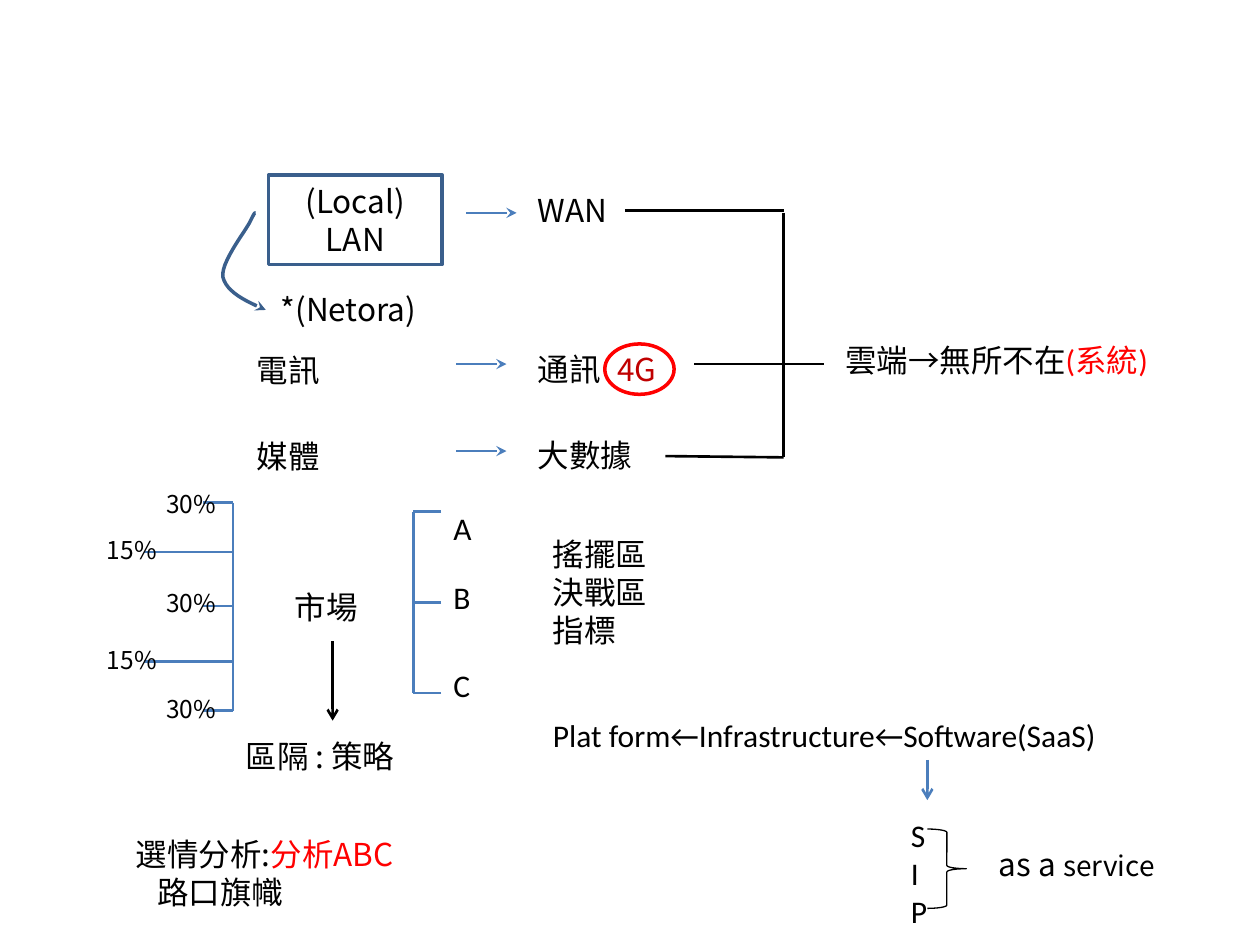
from dataclasses import dataclass

from lxml.etree import SubElement
from pptx import Presentation
from pptx.dml.color import RGBColor as Rgb
from pptx.enum.shapes import MSO_CONNECTOR as Connector, MSO_SHAPE as Shape
from pptx.enum.text import MSO_ANCHOR as Anchor, MSO_AUTO_SIZE as AutoSize, PP_ALIGN as Align
from pptx.oxml.ns import qn
from pptx.util import Inches, Pt


@dataclass(frozen=True)
class Theme:
    black: str = "000000"
    red: str = "FF0000"
    dark_red: str = "C00000"
    blue: str = "4B7EBC"
    navy: str = "3A5F8C"
    cjk: str = "Noto Sans CJK SC"
    latin: str = "Calibri"
    body: float = 18
    service: float = 16
    percent: float = 14
    hairline: float = 0.75
    rule: float = 1.5
    outline: float = 2


THEME = Theme()


@dataclass(frozen=True)
class Run:
    text: str
    color: str = THEME.black
    size: float = THEME.body
    font: str = THEME.cjk


@dataclass(frozen=True)
class Label:
    left: float
    top: float
    width: float
    height: float
    paragraphs: tuple[tuple[Run, ...], ...]


@dataclass(frozen=True)
class Rule:
    start: tuple[float, float]
    end: tuple[float, float]
    color: str = THEME.blue
    head: str = ""


def apply(target, formats: dict) -> None:
    for name, value in formats.items():
        setattr(target, name, value)


def style_line(line, color: str, width: float, head: str = "") -> None:
    line.fill.solid()
    line.fill.fore_color.rgb = Rgb.from_string(color)
    line.width = Pt(width)
    if head:
        SubElement(line._get_or_add_ln(), qn("a:tailEnd"), type=head)


def add_runs(paragraph, runs: tuple[Run, ...]) -> None:
    for part in runs:
        run = paragraph.add_run()
        run.text = part.text
        apply(run.font, {"name": part.font, "size": Pt(part.size)})
        run.font.color.rgb = Rgb.from_string(part.color)
        SubElement(run.font._element, qn("a:ea"), typeface=THEME.cjk)


def write(frame, paragraphs: tuple[tuple[Run, ...], ...]) -> None:
    for index, runs in enumerate(paragraphs):
        add_runs(frame.add_paragraph() if index else frame.paragraphs[0], runs)


def draw_label(shapes, label: Label):
    box = shapes.add_textbox(*map(Inches, (label.left, label.top, label.width, label.height)))
    apply(box.text_frame, {"word_wrap": True, "auto_size": AutoSize.SHAPE_TO_FIT_TEXT})
    write(box.text_frame, label.paragraphs)
    return box


def draw_rule(shapes, rule: Rule) -> None:
    connector = shapes.add_connector(Connector.STRAIGHT, *map(Inches, rule.start + rule.end))
    style_line(connector.line, rule.color, THEME.rule, rule.head)
    SubElement(connector._element.spPr, qn("a:effectLst"))


def draw_outline(shapes, kind, bounds: tuple[float, ...], color: str, width: float):
    shape = shapes.add_shape(kind, *map(Inches, bounds))
    shape.shadow.inherit = False
    shape.fill.background()
    style_line(shape.line, color, width)
    return shape


def draw_curved_arrow(shapes, start, curves, steps: int = 12) -> None:
    """Trace cubic Bezier segments, each given as two controls and an end."""
    points, here = [], start
    for first, second, end in curves:
        for step in range(1, steps + 1):
            t = step / steps
            u = 1 - t
            points.append(tuple(
                Inches(u**3 * a + 3 * u * u * t * b + 3 * u * t * t * c + t**3 * d)
                for a, b, c, d in zip(here, first, second, end)))
        here = end
    builder = shapes.build_freeform(*map(Inches, start))
    builder.add_line_segments(points, close=False)
    arrow = builder.convert_to_shape()
    arrow.shadow.inherit = False
    arrow.fill.background()
    style_line(arrow.line, THEME.navy, THEME.outline, "stealth")


def line_of(text: str, **formats) -> tuple[tuple[Run, ...], ...]:
    return ((Run(text, **formats),),)


def latin_lines(*texts: str) -> tuple[tuple[Run, ...], ...]:
    return tuple((Run(text, font=THEME.latin),) for text in texts)


PERCENTS = [
    Label(left, top, 0.71, 0.34, line_of(share, size=THEME.percent))
    for left, top, share in ((1.22, 3.83, "30%"), (0.75, 4.2, "15%"), (1.22, 4.62, "30%"),
                             (0.75, 5.07, "15%"), (1.22, 5.46, "30%"))
]
GRADES = [Label(3.5, top, 0.55, 0.4, latin_lines(grade))
          for grade, top in (("A", 3.99), ("B", 4.54), ("C", 5.24))]
LABELS = [
    Label(2.13, 2.25, 1.57, 0.4, line_of("*(Netora)")),
    Label(4.17, 1.47, 1.1, 0.4, line_of("WAN")),
    Label(1.94, 2.74, 1.96, 0.4, line_of("電訊")),
    Label(4.17, 2.73, 1.1, 0.4, line_of("通訊")),
    Label(1.94, 3.42, 1.96, 0.4, line_of("媒體")),
    Label(4.17, 3.41, 1.1, 0.4, line_of("大數據")),
    Label(4.8, 2.73, 0.55, 0.41, line_of("4G", color=THEME.dark_red)),
    Label(6.61, 2.66, 2.8, 0.4, ((Run("雲端→無所不在", font=THEME.latin),
                                  Run("(系統)", THEME.red, font=THEME.latin)),)),
    Label(2.24, 4.62, 0.87, 0.4, line_of("市場")),
    Label(1.85, 5.8, 1.65, 0.4, line_of("區隔 : 策略")),
    Label(4.29, 4.2, 1.06, 1.01, tuple((Run(text),) for text in ("搖擺區", "決戰區", "指標"))),
    Label(4.29, 5.63, 5.2, 0.4, latin_lines("Plat form←Infrastructure←Software(SaaS)")),
    Label(7.13, 6.43, 0.71, 1.01, latin_lines("S", "I", "P")),
    Label(7.83, 6.66, 2.2, 0.4, ((Run("as a "), Run("service", size=THEME.service)),)),
    *PERCENTS,
    *GRADES,
]

ARROWS = [Rule((left, y), (left + 0.4, y), head="stealth")
          for left, y in ((3.7, 1.69), (3.62, 2.89), (3.62, 3.58))]
CLOUD_BRACKET = [
    Rule(start, end, THEME.black)
    for start, end in (((4.96, 1.67), (6.22, 1.67)), ((6.22, 1.69), (6.22, 3.63)),
                       ((5.28, 3.62), (6.22, 3.63)), ((5.51, 2.89), (6.54, 2.89)))
]
SHARE_TICKS = [Rule((1.85, y), (left, y)) for left, y in
               ((1.61, 3.99), (1.14, 4.38), (1.61, 4.81), (1.14, 5.25), (1.61, 5.64))]
GRADE_TICKS = [Rule((3.5, y), (3.28, y)) for y in (4.06, 4.78, 5.5)]
RULES = [
    *ARROWS, *CLOUD_BRACKET, *SHARE_TICKS, *GRADE_TICKS,
    Rule((1.85, 3.99), (1.85, 5.64)),
    Rule((3.28, 4.06), (3.28, 5.5)),
    Rule((2.64, 5.09), (2.64, 5.72), THEME.black, "arrow"),
    Rule((7.36, 6.03), (7.36, 6.35), head="arrow"),
]


def main() -> None:
    deck = Presentation()
    apply(deck, {"slide_width": Inches(10), "slide_height": Inches(7.5)})
    shapes = deck.slides.add_slide(deck.slide_layouts[6]).shapes

    lan = draw_outline(shapes, Shape.RECTANGLE, (2.13, 1.39, 1.38, 0.71),
                       THEME.navy, THEME.outline)
    lan.text_frame.vertical_anchor = Anchor.MIDDLE
    write(lan.text_frame, line_of("(Local)") + line_of("LAN"))
    for paragraph in lan.text_frame.paragraphs:
        paragraph.alignment = Align.CENTER
    draw_curved_arrow(shapes, (2.03, 1.69), (
        ((2.02, 1.69), (2.02, 1.69), (1.98, 1.77)),
        ((1.93, 1.86), (1.75, 2.09), (1.77, 2.2)),
        ((1.8, 2.32), (1.95, 2.39), (2.11, 2.46)),
    ))
    draw_outline(shapes, Shape.OVAL, (4.8, 2.73, 0.55, 0.4), THEME.red, THEME.outline)
    draw_outline(shapes, Shape.RIGHT_BRACE, (7.36, 6.58, 0.31, 0.63),
                 THEME.black, THEME.hairline)

    for rule in RULES:
        draw_rule(shapes, rule)
    for label in LABELS:
        draw_label(shapes, label)

    election = draw_label(shapes, Label(0.98, 6.58, 2.52, 0.71, (
        (Run("選情分析:"), Run("分析ABC", THEME.red)),)))
    analysis = election.text_frame.paragraphs[0]
    analysis.add_line_break()
    add_runs(analysis, (Run("路口旗幟"),))
    hanging = Inches(0.17)
    apply_indent = analysis._element.get_or_add_pPr().set
    apply_indent("marL", str(hanging))
    apply_indent("indent", str(-hanging))

    deck.save("out.pptx")


if __name__ == "__main__":
    main()
